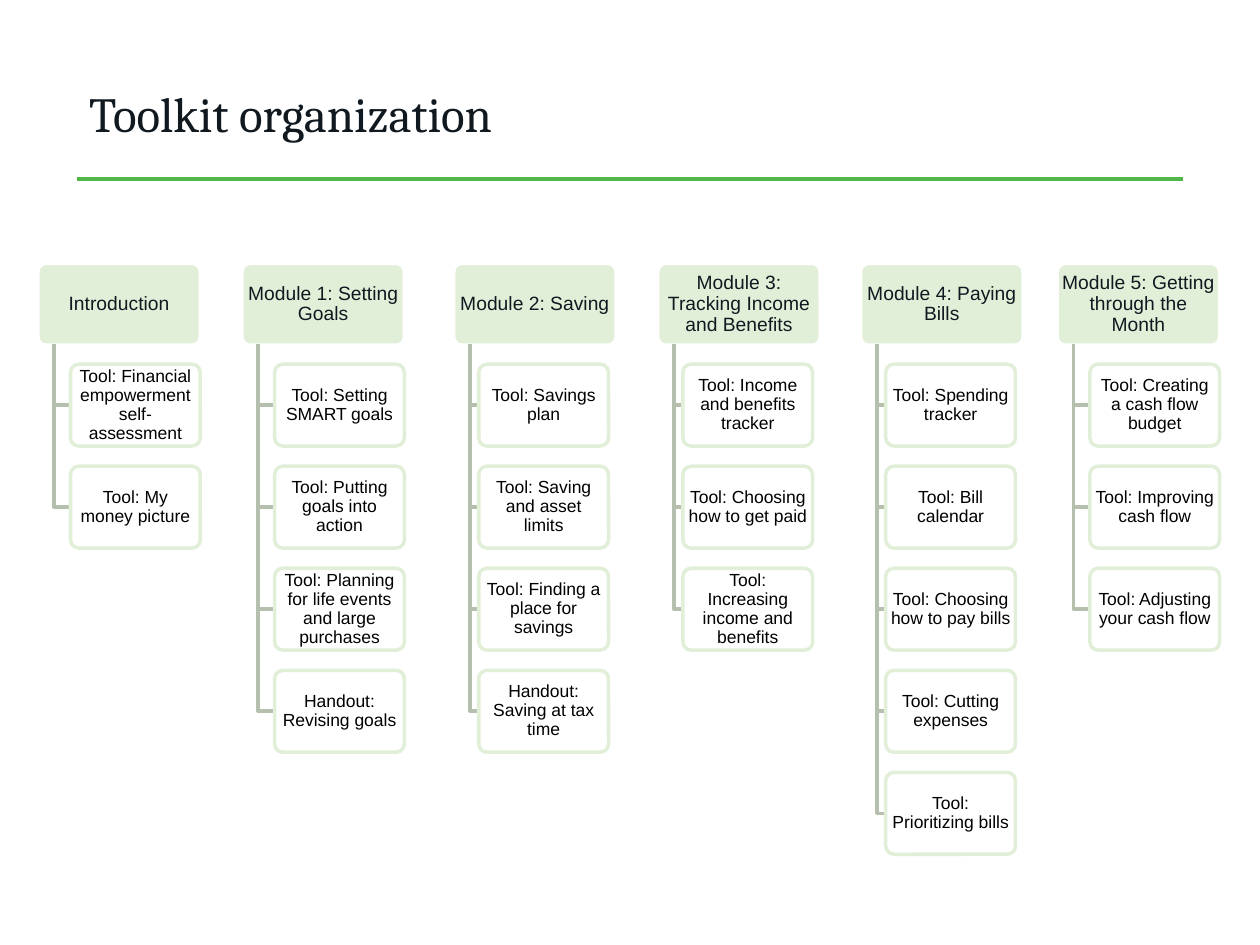
from lxml import etree
from pptx import Presentation
from pptx.dml.color import RGBColor
from pptx.enum.shapes import MSO_CONNECTOR, MSO_SHAPE
from pptx.enum.text import MSO_ANCHOR, PP_ALIGN
from pptx.oxml.ns import qn
from pptx.util import Inches, Pt

ROUNDED = MSO_SHAPE.ROUNDED_RECTANGLE
STRAIGHT = MSO_CONNECTOR.STRAIGHT
MIDDLE = MSO_ANCHOR.MIDDLE
LEFT, CENTER = PP_ALIGN.LEFT, PP_ALIGN.CENTER

TITLE = "Toolkit organization"

# Column left, indent of its tool boxes, heading, tools
COLUMNS = [
    (0.3, 0.26, "Introduction", [
        "Tool: Financial empowerment self-assessment",
        "Tool: My money picture"]),
    (1.92, 0.26, "Module 1: Setting Goals", [
        "Tool: Setting SMART goals",
        "Tool: Putting goals into action",
        "Tool: Planning for life events and large purchases",
        "Handout: Revising goals"]),
    (3.6, 0.2, "Module 2: Saving", [
        "Tool: Savings plan",
        "Tool: Saving and asset limits",
        "Tool: Finding a place for savings",
        "Handout: Saving at tax time"]),
    (5.22, 0.2, "Module 3: Tracking Income and Benefits", [
        "Tool: Income and benefits tracker",
        "Tool: Choosing how to get paid",
        "Tool: Increasing income and benefits"]),
    (6.83, 0.2, "Module 4: Paying Bills", [
        "Tool: Spending tracker",
        "Tool: Bill calendar",
        "Tool: Choosing how to pay bills",
        "Tool: Cutting expenses",
        "Tool: Prioritizing bills"]),
    (8.39, 0.26, "Module 5: Getting through the Month", [
        "Tool: Creating a cash flow budget",
        "Tool: Improving cash flow",
        "Tool: Adjusting your cash flow"]),
]

THEME = {
    "title_font": "Cambria", "body_font": "Arial",
    "title_size": 28, "heading_size": 11, "tool_size": 10,
    "ink": "101820", "black": "000000", "white": "FFFFFF",
    "rule": "50B748", "pale_green": "E2EFD8", "branch": "B5BFAD",
    "line_width": 2,
}

HEADING_TOP, HEADING_WIDTH = 2.09, 1.29
TOOL_TOP, TOOL_WIDTH, TOOL_PITCH = 2.89, 1.03, 0.81
BOX_HEIGHT = 0.65
BRANCH_INDENT, BRANCH_TOP = 0.13, 2.73


def color(name):
    return RGBColor.from_string(THEME[name])


def set_line(line, name):
    line.color.rgb = color(name)
    line.width = Pt(THEME["line_width"])


def write_text(shape, text, *, font, size, ink, align=CENTER,
               inset=(0.02, 0.02), spacing=None):
    """Fill the shape with one paragraph; inset is (sides, top and bottom)."""
    frame = shape.text_frame
    frame.word_wrap = True
    frame.vertical_anchor = MIDDLE
    frame.margin_left = frame.margin_right = Inches(inset[0])
    frame.margin_top = frame.margin_bottom = Inches(inset[1])
    paragraph = frame.paragraphs[0]
    paragraph.alignment = align
    paragraph.line_spacing = spacing
    run = paragraph.add_run()
    run.text = text
    run.font.name = THEME[font]
    run.font.size = Pt(THEME[size])
    run.font.color.rgb = color(ink)


def add_box(shapes, left, top, width, fill, outline):
    box = shapes.add_shape(ROUNDED, Inches(left), Inches(top),
                           Inches(width), Inches(BOX_HEIGHT))
    box.adjustments[0] = 0.1
    box.shadow.inherit = False
    box.fill.solid()
    box.fill.fore_color.rgb = color(fill)
    set_line(box.line, outline)
    return box


def add_branch(shapes, left, right, bottom):
    """Draw the L-shaped line from a heading down and across to a tool."""
    builder = shapes.build_freeform(Inches(left), Inches(BRANCH_TOP))
    builder.add_line_segments([(Inches(left), Inches(bottom)),
                               (Inches(right), Inches(bottom))], close=False)
    branch = builder.convert_to_shape()
    branch.shadow.inherit = False
    branch.fill.background()
    set_line(branch.line, "branch")


def add_column(shapes, left, tool_indent, heading, tools):
    box = add_box(shapes, left, HEADING_TOP, HEADING_WIDTH, "pale_green", "white")
    write_text(box, heading, font="body_font", size="heading_size",
               ink="ink", spacing=0.9)
    tool_left = left + tool_indent
    for row, tool in enumerate(tools):
        top = TOOL_TOP + row * TOOL_PITCH
        add_branch(shapes, left + BRANCH_INDENT, tool_left, top + BOX_HEIGHT / 2)
        box = add_box(shapes, tool_left, top, TOOL_WIDTH, "white", "pale_green")
        write_text(box, tool, font="body_font", size="tool_size",
                   ink="black", inset=(0.02, 0.01), spacing=0.9)


def add_title(slide):
    rule = slide.shapes.add_connector(STRAIGHT, Inches(0.61), Inches(1.42),
                                      Inches(9.39), Inches(1.42))
    set_line(rule.line, "rule")
    etree.SubElement(rule._element.spPr, qn("a:effectLst"))
    title = slide.shapes.add_textbox(Inches(0.61), Inches(0.49),
                                     Inches(8.79), Inches(0.81))
    write_text(title, TITLE, font="title_font", size="title_size",
               ink="ink", align=LEFT, inset=(0.1, 0.05))


def main():
    presentation = Presentation()
    presentation.slide_width = Inches(10)
    presentation.slide_height = Inches(7.5)
    slide = presentation.slides.add_slide(presentation.slide_layouts[6])
    add_title(slide)
    diagram = slide.shapes.add_group_shape()
    for column in COLUMNS:
        add_column(diagram.shapes, *column)
    presentation.save("out.pptx")


if __name__ == "__main__":
    main()
